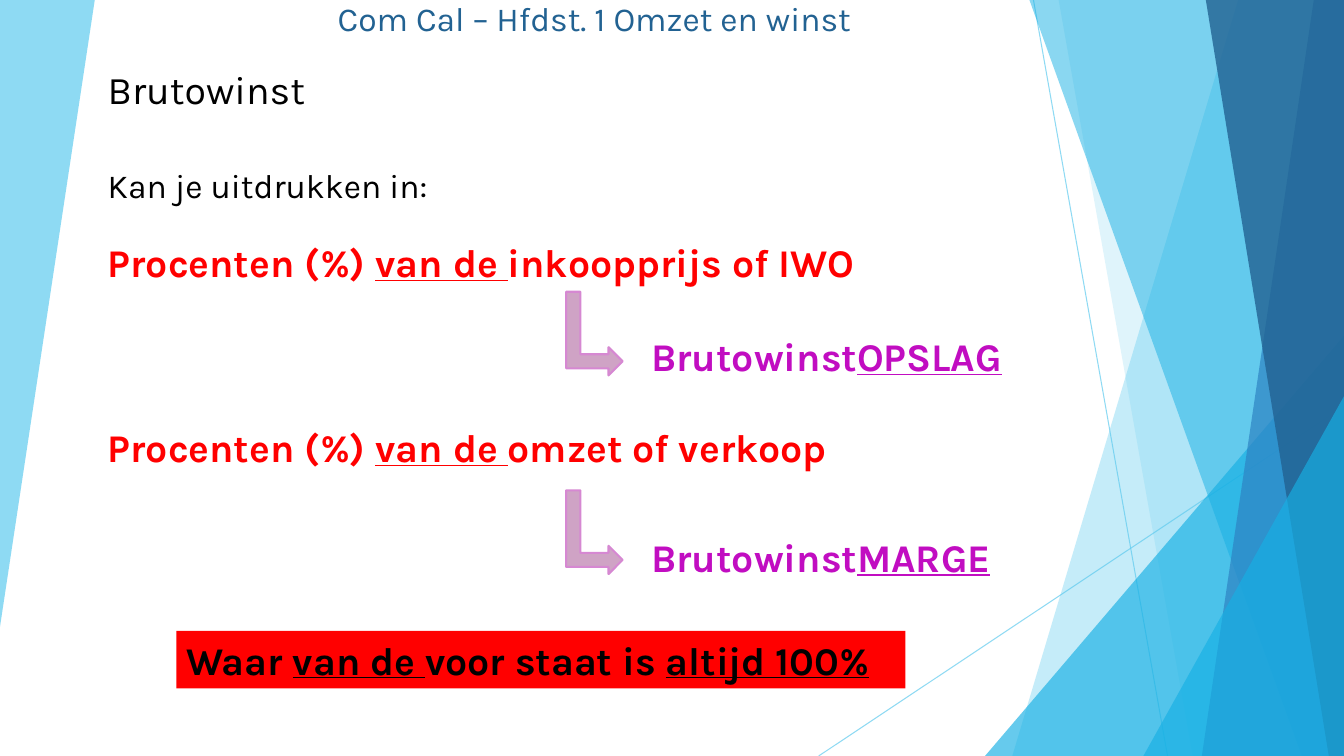
from lxml import etree
from pptx import Presentation
from pptx import util as u
from pptx.dml.color import RGBColor
from pptx.enum import shapes, text
from pptx.oxml.ns import qn

SKY, CYAN, BLUE, NAVY = "5FCBEF", "17B0E4", "2E83C3", "226292"
RED, PURPLE, BLACK = "FF0000", "C10DC1", "000000"
W, H = 13.33, 7.5


def rgb(value):
    return RGBColor.from_string(value)


class Deck:
    font = "Karla"

    def __init__(self):
        self.prs = Presentation()
        self.prs.slide_width, self.prs.slide_height = u.Inches(W), u.Inches(H)
        self.s = self.prs.slides.add_slide(self.prs.slide_layouts[6])

    def opacity(self, sp, percent):
        color = sp._element.spPr.find(".//" + qn("a:srgbClr"))
        etree.SubElement(color, qn("a:alpha"), val=str(percent * 1000))

    def paint(self, sp, color, percent=100, line=None):
        sp.shadow.inherit = False
        sp.fill.solid()
        sp.fill.fore_color.rgb = rgb(color)
        if percent < 100:
            self.opacity(sp, percent)
        if line:
            sp.line.color.rgb = rgb(line)
            sp.line.width = u.Pt(1.5)
        else:
            sp.line.fill.background()
        return sp

    def facet(self, points, color, percent):
        start, *rest = [(u.Inches(x), u.Inches(y)) for x, y in points]
        builder = self.s.shapes.build_freeform(*start)
        builder.add_line_segments(rest, close=True)
        return self.paint(builder.convert_to_shape(), color, percent)

    def shape(self, kind, box, color, percent=100, line=None):
        sp = self.s.shapes.add_shape(kind, *map(u.Inches, box))
        return self.paint(sp, color, percent, line)

    def line(self, x1, y1, x2, y2):
        sp = self.s.shapes.add_connector(
            shapes.MSO_CONNECTOR.STRAIGHT, *map(u.Inches, (x1, y1, x2, y2)))
        sp.line.color.rgb = rgb(SKY)
        sp.line.width = u.Pt(0.75)
        self.opacity(sp, 70)
        etree.SubElement(sp._element.spPr, qn("a:effectLst"))

    def fill_text(self, sp, runs, color, size=28, bold=False,
                  align=text.PP_ALIGN.LEFT, anchor=text.MSO_ANCHOR.TOP):
        """Every second run is underlined."""
        tf = sp.text_frame
        tf.word_wrap = True
        tf.vertical_anchor = anchor
        p = tf.paragraphs[0]
        p.alignment = align
        for i, words in enumerate(runs):
            r = p.add_run()
            r.text = words
            style = {"name": self.font, "size": u.Pt(size), "bold": bold,
                     "underline": i % 2 == 1}
            for key, value in style.items():
                setattr(r.font, key, value)
            r.font.color.rgb = rgb(color)

    def label(self, box, runs, color, **style):
        sp = self.s.shapes.add_textbox(*map(u.Inches, box))
        self.fill_text(sp, runs, color, **style)


def main():
    deck = Deck()
    kinds = shapes.MSO_SHAPE

    def band(top, bottom, color, percent):
        """Facet from a slanted left edge to the right side of the slide."""
        deck.facet([(top, 0), (W, 0), (W, H), (bottom, H)], color, percent)

    def corner(left, top):
        """Right-angled triangle in the bottom right corner."""
        sp = deck.shape(kinds.ISOSCELES_TRIANGLE,
                        (left, top, W - left, H - top), CYAN, 66)
        sp.adjustments[0] = 1

    # Background facets
    deck.facet([(0, 0), (0.94, 0), (0, 6.22)], SKY, 70)
    deck.line(10.25, 0, 11.58, H)
    deck.line(W, 4.03, 8.12, H)
    band(12.28, 10.04, SKY, 36)
    band(10.5, 11.83, SKY, 20)
    corner(9.77, 3.33)
    band(10.21, 12.91, CYAN, 50)
    band(13.03, 11.92, BLUE, 70)
    band(11.96, 13.18, NAVY, 80)
    corner(11.34, 3.93)

    # Title and introduction
    deck.label((0, 0, 11.79, 0.43), ["Com Cal – Hfdst. 1 Omzet en winst"], NAVY,
               size=24, align=text.PP_ALIGN.CENTER,
               anchor=text.MSO_ANCHOR.BOTTOM)
    deck.label((0.97, 0.6, 2.45, 0.57), ["Brutowinst"], BLACK)
    deck.label((0.97, 1.59, 6.19, 0.5), ["Kan je uitdrukken in:"], BLACK, size=24)

    # Percentage of a base, with an arrow to its name
    for top, base, arrow_top, name_top, name in (
            (2.32, "inkoopprijs of IWO", 3.03, 3.25, "OPSLAG"),
            (4.15, "omzet of verkoop", 5, 5.24, "MARGE")):
        deck.label((0.97, top, 8.19, 0.57),
                   ["Procenten (%) ", "van de ", base], RED, bold=True)
        arrow = deck.shape(kinds.BENT_UP_ARROW, (5.48, arrow_top, 0.83, 0.56),
                           "CFA3C5", line="D688D2")
        arrow.rotation = 90
        deck.label((6.36, name_top, 3.72, 0.57), ["Brutowinst", name],
                   PURPLE, bold=True)

    # Rule to remember
    rule = deck.shape(kinds.RECTANGLE, (1.75, 6.26, 7.23, 0.57), RED)
    deck.fill_text(rule, ["Waar ", "van de ", "voor staat is ", "altijd 100%"],
                   BLACK, bold=True)

    deck.prs.save("out.pptx")


if __name__ == "__main__":
    main()
